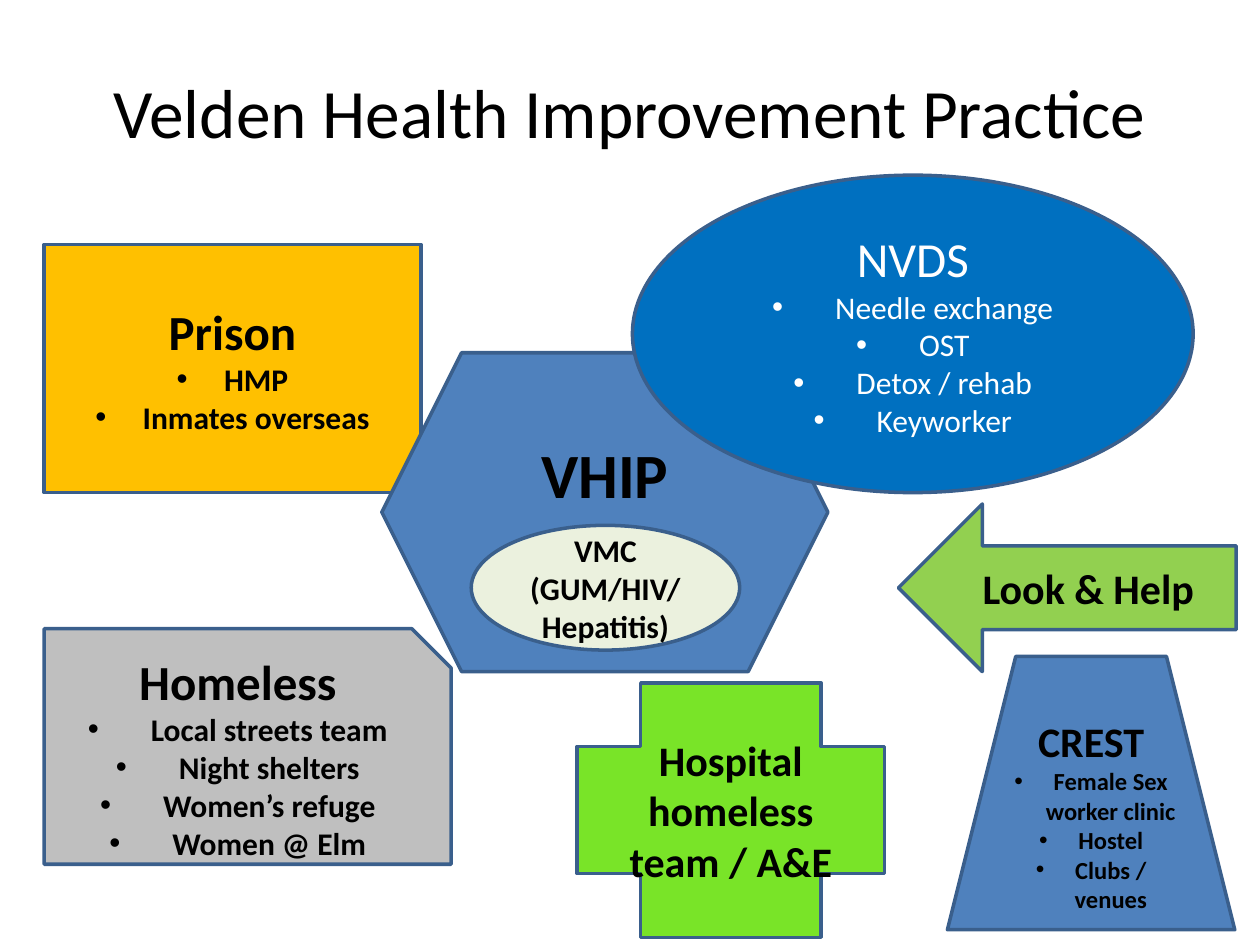
from pptx import Presentation
from pptx.dml.color import RGBColor
from pptx.enum.shapes import MSO_SHAPE
from pptx.enum.text import MSO_ANCHOR, PP_ALIGN
from pptx.oxml.ns import qn
from pptx.util import Pt
from lxml.etree import SubElement

BLACK = RGBColor(0x00, 0x00, 0x00)
WHITE = RGBColor(0xFF, 0xFF, 0xFF)
OUTLINE = RGBColor(0x3A, 0x5F, 0x8C)
AMBER = RGBColor(0xFF, 0xC0, 0x00)
STEEL = RGBColor(0x4F, 0x81, 0xBD)
BLUE = RGBColor(0x00, 0x70, 0xC0)
LIME = RGBColor(0x79, 0xE4, 0x28)
GREY = RGBColor(0xBF, 0xBF, 0xBF)
GREEN = RGBColor(0x92, 0xD0, 0x50)
PALE = RGBColor(0xEB, 0xF1, 0xDE)

FRAME_FORMAT = {"word_wrap": True, "vertical_anchor": MSO_ANCHOR.MIDDLE}
BULLET_FONT = "Arial"


def add_line(paragraph, text, size, color=BLACK, bold=True):
    paragraph.alignment = PP_ALIGN.CENTER
    run = paragraph.add_run()
    run.text = text
    font_format = {"name": "Calibri", "size": Pt(size), "bold": bold}
    for name, value in font_format.items():
        setattr(run.font, name, value)
    run.font.color.rgb = color


def add_bullet(paragraph, indent):
    properties = paragraph._p.get_or_add_pPr()
    properties.set("marL", str(Pt(indent)))
    properties.set("indent", str(-Pt(indent)))
    SubElement(properties, qn("a:buFont")).set("typeface", BULLET_FONT)
    SubElement(properties, qn("a:buChar")).set("char", "•")


presentation = Presentation()
presentation.slide_width = Pt(720)
presentation.slide_height = Pt(540)
slide = presentation.slides.add_slide(presentation.slide_layouts[6])

title = slide.shapes.add_textbox(Pt(36), Pt(15.1), Pt(648), Pt(96.5))
for name, value in FRAME_FORMAT.items():
    setattr(title.text_frame, name, value)
add_line(title.text_frame.paragraphs[0], "Velden Health Improvement Practice", 39.6, bold=False)

services = [
    {"kind": MSO_SHAPE.RECTANGLE, "box": (25.2, 139.7, 215.3, 141.8), "fill": AMBER,
     "heading": "Prison", "size": 28, "indent": 27,
     "items": ["HMP", "Inmates overseas"]},
    {"kind": MSO_SHAPE.HEXAGON, "box": (218.2, 201.6, 254.9, 182.2), "fill": STEEL,
     "heading": "VHIP", "size": 36, "bottom": 47.5},
    {"kind": MSO_SHAPE.OVAL, "box": (361.4, 100.1, 320.4, 181.4), "fill": BLUE,
     "heading": "NVDS", "size": 28, "indent": 36, "color": WHITE, "bold": False,
     "items": ["Needle exchange", "OST", "Detox / rehab", "Keyworker"]},
    {"kind": MSO_SHAPE.CROSS, "box": (329.8, 390.2, 175.7, 145.4), "fill": LIME,
     "heading": "Hospital homeless team / A&E", "size": 24},
    {"kind": MSO_SHAPE.SNIP_1_RECTANGLE, "box": (25.2, 359.3, 232.6, 134.6), "fill": GREY,
     "heading": "Homeless", "size": 28, "indent": 36,
     "items": ["Local streets team", "Night shelters", "Women’s refuge", "Women @ Elm"]},
    {"kind": MSO_SHAPE.LEFT_ARROW, "box": (513.4, 288, 193, 95.8), "fill": GREEN,
     "heading": "Look & Help", "size": 24},
    {"kind": MSO_SHAPE.TRAPEZOID, "box": (541.4, 375.1, 164.2, 156.2), "fill": STEEL,
     "heading": "CREST", "size": 24, "indent": 22.5, "item_size": 14,
     "items": ["Female Sex worker clinic", "Hostel", "Clubs / venues"]},
    {"kind": MSO_SHAPE.OVAL, "box": (269.3, 300.2, 153.4, 71.3), "fill": PALE,
     "heading": "VMC (GUM/HIV/Hepatitis)", "size": 18},
]

for service in services:
    shape = slide.shapes.add_shape(service["kind"], *[Pt(length) for length in service["box"]])
    shape.shadow.inherit = False
    shape.fill.solid()
    shape.fill.fore_color.rgb = service["fill"]
    shape.line.color.rgb = OUTLINE
    shape.line.width = Pt(2)
    frame = shape.text_frame
    for name, value in FRAME_FORMAT.items():
        setattr(frame, name, value)
    frame.margin_bottom = Pt(service.get("bottom", 3.6))
    color = service.get("color", BLACK)
    bold = service.get("bold", True)
    add_line(frame.paragraphs[0], service["heading"], service["size"], color, bold)
    for item in service.get("items", []):
        paragraph = frame.add_paragraph()
        add_line(paragraph, item, service.get("item_size", 18), color, bold)
        add_bullet(paragraph, service["indent"])

presentation.save("out.pptx")
